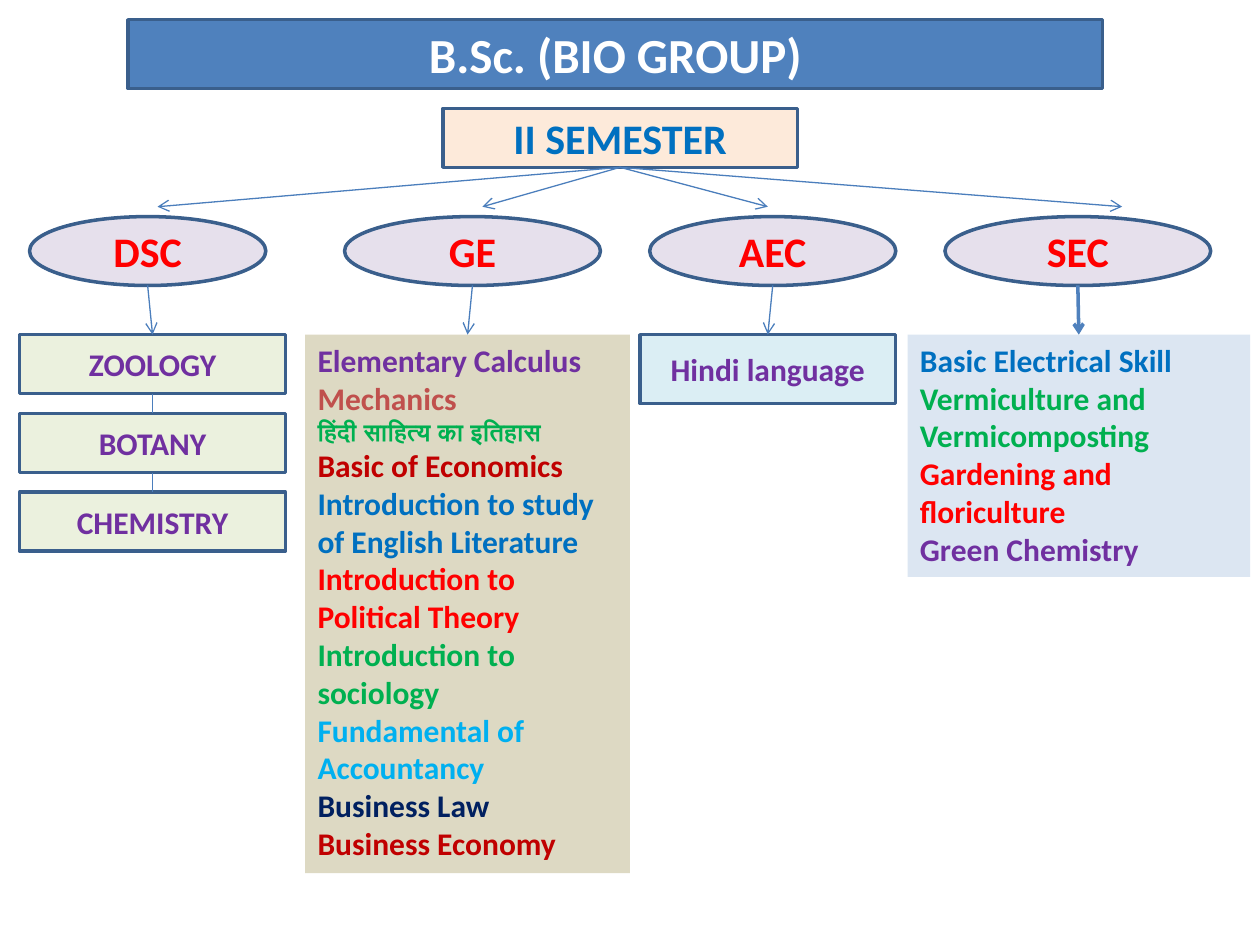
"""Builds the course chart for the second semester of the B.Sc. bio group."""
from pptx import Presentation
from pptx.dml.color import RGBColor
from pptx.enum.shapes import MSO_CONNECTOR, MSO_SHAPE
from pptx.enum.text import MSO_ANCHOR, MSO_AUTO_SIZE, PP_ALIGN
from pptx.oxml.ns import qn
from pptx.util import Inches, Pt
from lxml import etree

RECT, OVAL = MSO_SHAPE.RECTANGLE, MSO_SHAPE.OVAL
STRAIGHT = MSO_CONNECTOR.STRAIGHT
MIDDLE, TOP = MSO_ANCHOR.MIDDLE, MSO_ANCHOR.TOP
CENTER, LEFT = PP_ALIGN.CENTER, PP_ALIGN.LEFT
NO_FIT = MSO_AUTO_SIZE.NONE
FONT = "Calibri"
CELL = Inches(10) / 128
TITLE_ONLY = 5

COLORS = {
    "banner": "4F81BD", "outline": "3A5F8C", "link": "4B7EBC",
    "peach": "FDEADA", "lilac": "E6E0EC", "mint": "EBF1DE",
    "tan": "DDD9C3", "aqua": "DBEEF4", "ice": "DCE6F2",
    "white": "FFFFFF", "blue": "0070C0", "red": "FF0000",
    "purple": "7030A0", "brick": "C0504D", "green": "00B050",
    "crimson": "C00000", "sky": "00B0F0", "navy": "002060",
}

CATEGORIES = [("DSC", 3, 24), ("GE", 35, 26), ("AEC", 66, 25), ("SEC", 96, 27)]
CATEGORY_ARROW_ENDS = [16, 49, 78, 114]
CORE_SUBJECTS = ["ZOOLOGY", "BOTANY", "CHEMISTRY"]
ELECTIVES = [
    ("Elementary Calculus", "purple", 18),
    ("Mechanics", "brick", 18),
    ("हिंदी साहित्य का इतिहास", "green", 14),
    ("Basic of Economics", "crimson", 18),
    ("Introduction to study of English Literature", "blue", 18),
    ("Introduction to Political Theory", "red", 18),
    ("Introduction to sociology", "green", 18),
    ("Fundamental of Accountancy", "sky", 18),
    ("Business Law", "navy", 18),
    ("Business Economy", "crimson", 18),
]
SKILLS = [
    ("Basic Electrical Skill", "blue", 18),
    ("Vermiculture and Vermicomposting", "green", 18),
    ("Gardening and floriculture", "red", 18),
    ("Green Chemistry", "purple", 18),
]


def rgb(name):
    """Return the named colour."""
    return RGBColor.from_string(COLORS[name])


def grid(*cells):
    """Turn grid columns and rows into slide lengths."""
    return [round(cell * CELL) for cell in cells]


def center_x(shape):
    """Return the horizontal centre of a shape."""
    return shape.left + shape.width // 2


def bottom(shape):
    """Return the lower edge of a shape."""
    return shape.top + shape.height


def write(shape, lines, align, anchor):
    """Fill a shape with bold lines given as text, colour and size."""
    frame = shape.text_frame
    frame.text = "\n".join(text for text, _, _ in lines)
    frame.word_wrap = True
    frame.auto_size = NO_FIT
    frame.vertical_anchor = anchor
    for paragraph, (_, color, size) in zip(frame.paragraphs, lines):
        paragraph.alignment = align
        font = paragraph.runs[0].font
        font.name, font.size, font.bold = FONT, Pt(size), True
        font.color.rgb = rgb(color)


def paint(shape, fill, outlined=True):
    """Set the fill of a shape and its outline, if any."""
    shape.fill.solid()
    shape.fill.fore_color.rgb = rgb(fill)
    if outlined:
        shape.line.color.rgb = rgb("outline")
        shape.line.width = Pt(2)
    else:
        shape.line.fill.background()


def add_label(slide, kind, area, fill, text, color, size):
    """Add an outlined shape with one centred line."""
    label = slide.shapes.add_shape(kind, *grid(*area))
    label.shadow.inherit = False
    paint(label, fill)
    write(label, [(text, color, size)], CENTER, MIDDLE)
    return label


def add_course_list(slide, area, fill, courses):
    """Add a plain panel listing courses."""
    panel = slide.shapes.add_textbox(*grid(*area))
    paint(panel, fill, outlined=False)
    write(panel, courses, LEFT, TOP)
    return panel


def add_link(slide, start, end, arrow=True, color="link", width=0.75):
    """Add a straight line, with an open arrowhead if wanted."""
    link = slide.shapes.add_connector(STRAIGHT, *start, *end)
    link.line.color.rgb = rgb(color)
    link.line.width = Pt(width)
    if arrow:
        etree.SubElement(link.line._get_or_add_ln(), qn("a:tailEnd"), type="arrow")
    etree.SubElement(link._element.spPr, qn("a:effectLst"))


def link_down(slide, upper, lower, **style):
    """Link the bottom of one shape to the top of another."""
    add_link(slide, (center_x(upper), bottom(upper)),
             (center_x(lower), lower.top), **style)


def add_title(slide):
    """Format the title as a banner."""
    title = slide.shapes.title
    title.left, title.top, title.width, title.height = grid(13, 2, 99, 7)
    paint(title, "banner")
    write(title, [("B.Sc. (BIO GROUP)", "white", 28)], CENTER, MIDDLE)


def add_categories(slide):
    """Add the semester box and its four categories."""
    semester = add_label(slide, RECT, (45, 11, 36, 6), "peach",
                         "II SEMESTER", "blue", 24)
    for column in CATEGORY_ARROW_ENDS:
        add_link(slide, (center_x(semester), bottom(semester)), grid(column, 21))
    return [add_label(slide, OVAL, (column, 22, width, 7), "lilac", name, "red", 24)
            for name, column, width in CATEGORIES]


def add_core_subjects(slide):
    """Add the chain of core subjects and return its first box."""
    boxes = [add_label(slide, RECT, (2, 34 + 8 * row, 27, 6), "mint",
                       subject, "purple", 18)
             for row, subject in enumerate(CORE_SUBJECTS)]
    for upper, lower in zip(boxes, boxes[1:]):
        link_down(slide, upper, lower, arrow=False)
    return boxes[0]


def main():
    """Build and save the slide."""
    deck = Presentation()
    deck.slide_width, deck.slide_height = Inches(10), Inches(7.5)
    slide = deck.slides.add_slide(deck.slide_layouts[TITLE_ONLY])
    add_title(slide)
    dsc, ge, aec, sec = add_categories(slide)
    link_down(slide, dsc, add_core_subjects(slide))
    link_down(slide, ge, add_course_list(slide, (31, 34, 33, 54.7), "tan", ELECTIVES))
    link_down(slide, aec, add_label(slide, RECT, (65, 34, 26, 7), "aqua",
                                    "Hindi language", "purple", 18))
    link_down(slide, sec, add_course_list(slide, (92.2, 34, 34.8, 24.6), "ice", SKILLS),
              color="banner", width=2)
    deck.save("out.pptx")


if __name__ == "__main__":
    main()
